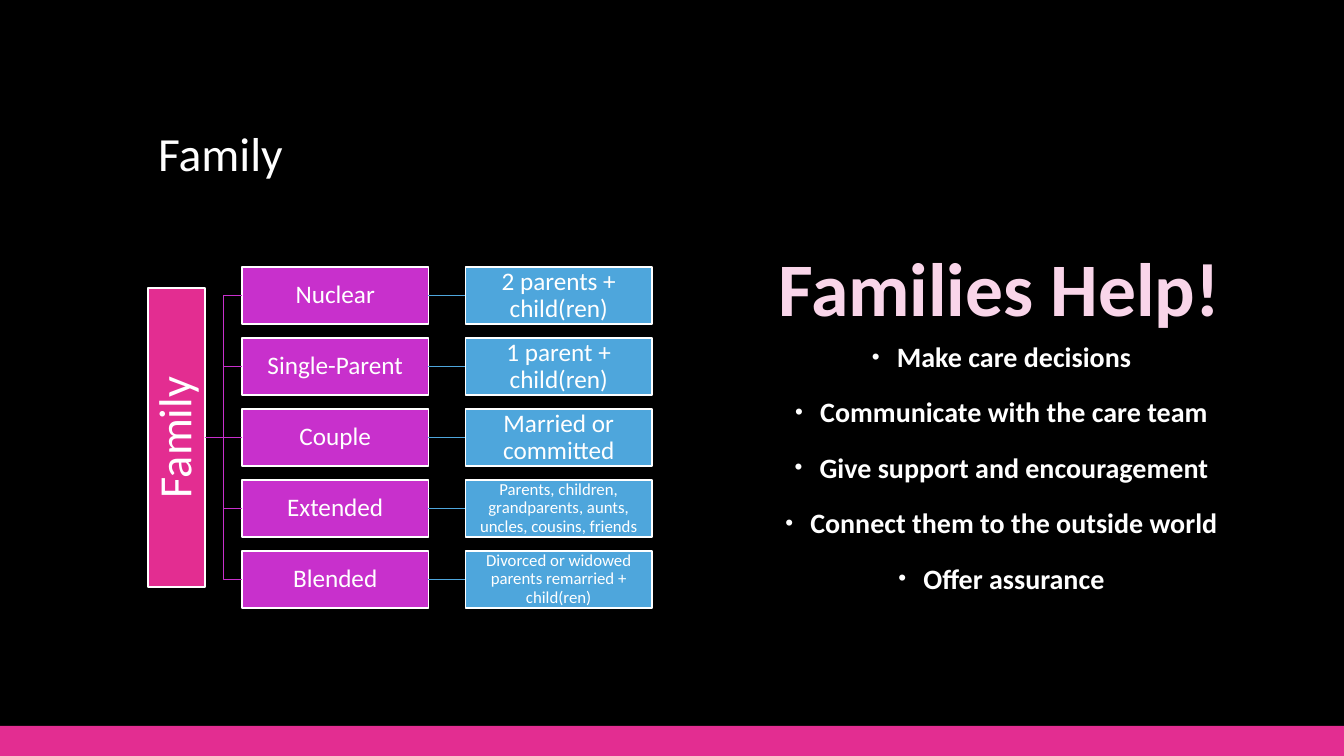
import pptx
import pptx.util
import pptx.dml.color
import pptx.enum.shapes
import pptx.enum.text
import pptx.oxml.ns
from lxml import etree

SCALE = 914400 / 100.8
FONT = "Calibri"
WHITE, BLACK = "FFFFFF", "000000"
PINK, PURPLE, BLUE, PALE_PINK = "E32D91", "C830CC", "4EA6DC", "F9D5E9"
TOP, LEFT, BOTTOM, RIGHT = range(4)
ANCHOR = pptx.enum.text.MSO_ANCHOR
ALIGN = pptx.enum.text.PP_ALIGN
CONNECTOR = pptx.enum.shapes.MSO_CONNECTOR

FAMILY_TYPES = [
    ("Nuclear", "2 parents + child(ren)", 18),
    ("Single-Parent", "1 parent + child(ren)", 18),
    ("Couple", "Married or committed", 18),
    ("Extended", "Parents, children, grandparents, aunts, uncles, cousins, friends", 12),
    ("Blended", "Divorced or widowed parents remarried + child(ren)", 12),
]
WAYS_TO_HELP = [
    "Make care decisions",
    "Communicate with the care team",
    "Give support and encouragement",
    "Connect them to the outside world",
    "Offer assurance",
]


def px(n):
    return pptx.util.Emu(round(n * SCALE))


def rgb(hex_color):
    return pptx.dml.color.RGBColor.from_string(hex_color)


def place(sp, x, y, w, h):
    sp.left, sp.top, sp.width, sp.height = px(x), px(y), px(w), px(h)


def add_run(p, text, size, color=WHITE, bold=False):
    r = p.add_run()
    r.text = text
    r.font.name, r.font.size, r.font.bold = FONT, pptx.util.Pt(size), bold
    r.font.color.rgb = rgb(color)


def add_box(s, x, y, w, h, fill, outline=None):
    sp = s.shapes.add_shape(pptx.enum.shapes.MSO_SHAPE.RECTANGLE, px(x), px(y), px(w), px(h))
    sp.shadow.inherit = False
    sp.fill.solid()
    sp.fill.fore_color.rgb = rgb(fill)
    if outline:
        sp.line.color.rgb = rgb(outline)
        sp.line.width = pptx.util.Pt(1)
    else:
        sp.line.fill.background()
    return sp


def add_node(s, x, y, w, h, fill, text, size, inset=1):
    sp = add_box(s, x, y, w, h, fill, WHITE)
    tf = sp.text_frame
    tf.word_wrap = True
    tf.vertical_anchor = ANCHOR.MIDDLE
    tf.margin_left = tf.margin_right = tf.margin_top = tf.margin_bottom = px(inset)
    p = tf.paragraphs[0]
    p.alignment, p.line_spacing = ALIGN.CENTER, 0.9
    add_run(p, text, size)
    return sp


def join(s, start, end, color, kind=CONNECTOR.STRAIGHT):
    """Link the right side of start to the left side of end."""
    line = s.shapes.add_connector(kind, 0, 0, 0, 0)
    line.begin_connect(start, RIGHT)
    line.end_connect(end, LEFT)
    line.line.color.rgb = rgb(color)
    line.line.width = pptx.util.Pt(1)
    etree.SubElement(line._element.spPr, pptx.oxml.ns.qn("a:effectLst"))


def add_title(s, x, y, w, h):
    place(s.shapes.title, x, y, w, h)
    tf = s.shapes.title.text_frame
    tf.word_wrap = True
    tf.auto_size = pptx.enum.text.MSO_AUTO_SIZE.NONE
    tf.vertical_anchor = ANCHOR.BOTTOM
    p = tf.paragraphs[0]
    p.alignment, p.line_spacing = ALIGN.LEFT, 0.9
    add_run(p, "Family", 34)


def add_family_tree(s, x, y, w, h):
    node_h, root_w, root_h, gap = 57, 57, 299, 37
    node_w = (w - root_w - 2 * gap) / 2
    pitch = (h - node_h) / (len(FAMILY_TYPES) - 1)
    type_x = x + root_w + gap
    meaning_x = type_x + node_w + gap
    root = add_node(s, x, y + (h - root_h) / 2, root_w, root_h, PINK, "Family", 33, inset=2)
    root.text_frame._txBody.bodyPr.set("vert", "vert270")
    for i, (name, meaning, size) in enumerate(FAMILY_TYPES):
        row_y = y + i * pitch
        kind = add_node(s, type_x, row_y, node_w, node_h, PURPLE, name, 18)
        detail = add_node(s, meaning_x, row_y, node_w, node_h, BLUE, meaning, size)
        middle = i == len(FAMILY_TYPES) // 2
        join(s, root, kind, PURPLE, CONNECTOR.STRAIGHT if middle else CONNECTOR.ELBOW)
        join(s, kind, detail, BLUE)


def add_bullet(p):
    pPr = p._p.get_or_add_pPr()
    pPr.set("marL", str(px(30)))
    pPr.set("indent", str(px(-25)))
    for tag, key, value in (("a:buSzPct", "val", "80000"),
                            ("a:buFont", "typeface", "Arial"),
                            ("a:buChar", "char", "•")):
        etree.SubElement(pPr, pptx.oxml.ns.qn(tag)).set(key, value)


def add_help_list(s, x, y, w, h):
    body = s.placeholders[1]
    place(body, x, y, w, h)
    tf = body.text_frame
    tf.word_wrap = True
    tf.auto_size = pptx.enum.text.MSO_AUTO_SIZE.NONE
    tf.vertical_anchor = ANCHOR.TOP
    for i, text in enumerate(WAYS_TO_HELP):
        p = tf.add_paragraph() if i else tf.paragraphs[0]
        p.alignment, p.line_spacing = ALIGN.CENTER, 0.9
        p.space_before = pptx.util.Pt(18)
        add_bullet(p)
        add_run(p, text, 20, bold=True)


def add_help_heading(s, x, y, w, h):
    tf = s.shapes.add_textbox(px(x), px(y), px(w), px(h)).text_frame
    tf.word_wrap = False
    tf.auto_size = pptx.enum.text.MSO_AUTO_SIZE.SHAPE_TO_FIT_TEXT
    p = tf.paragraphs[0]
    p.alignment = ALIGN.CENTER
    add_run(p, "Families Help!", 54, PALE_PINK, bold=True)


def main():
    prs = pptx.Presentation()
    prs.slide_width, prs.slide_height = px(1344), px(756)
    s = prs.slides.add_slide(prs.slide_layouts[1])
    s.background.fill.solid()
    s.background.fill.fore_color.rgb = rgb(BLACK)
    add_box(s, 0, 726, 1344, 30, PINK)
    add_title(s, 148, 51, 1048, 136)
    add_family_tree(s, 148, 267, 504, 341)
    add_help_list(s, 747, 338, 504, 274)
    add_help_heading(s, 766, 236, 467, 102)
    prs.save("out.pptx")


if __name__ == "__main__":
    main()
